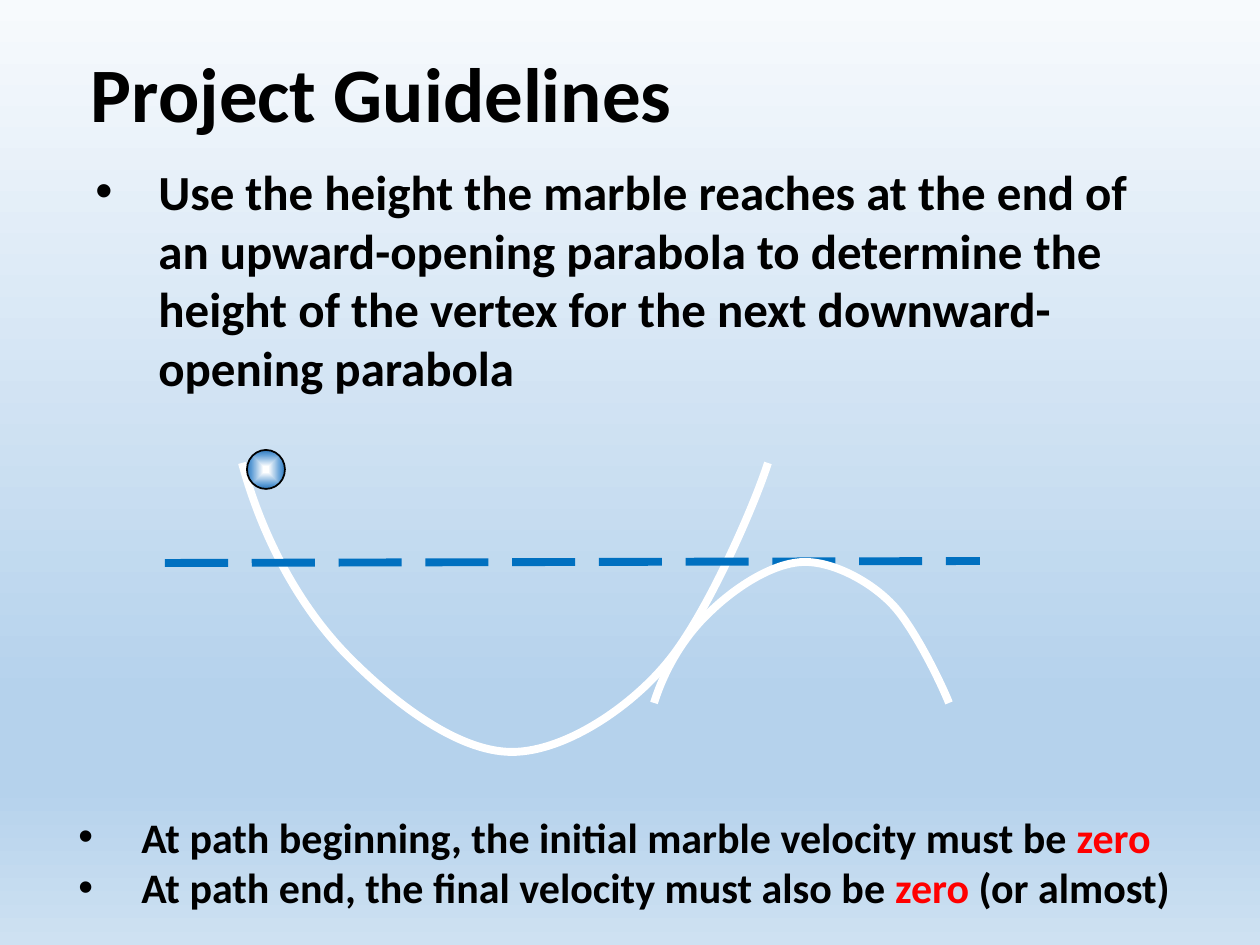
"""Build the Project Guidelines slide with its marble path diagram."""
from lxml.etree import SubElement
from pptx import Presentation
from pptx.dml.color import RGBColor
from pptx.enum.dml import MSO_LINE
from pptx.enum.shapes import MSO_CONNECTOR, MSO_SHAPE
from pptx.enum.text import MSO_ANCHOR, MSO_AUTO_SIZE, PP_ALIGN
from pptx.oxml.ns import qn
from pptx.util import Emu, Pt

PX = 914400 / 126
COLORS = {
    "text": "000000", "accent": "FF0000", "track": "FFFFFF", "level": "0070C0",
    "sky": "F7FAFD", "blue": "B5D2EC", "haze": "CEE1F2",
    "shine": "FFFFFF", "marble": "5B9BD5", "rim": "2E75B6", "edge": "ADCDEA",
}
TITLE = ("Project Guidelines", (78, 39, 961, 102), 44)
BULLETS = [
    ((83, 155, 1062, 255), 28, [
        [("Use the height the marble reaches at the end of an upward-opening "
          "parabola to determine the height of the vertex for the next "
          "downward-opening parabola", "text")],
    ]),
    ((66, 805, 1152, 122), 24, [
        [("At path beginning, the initial marble velocity must be ", "text"),
         ("zero", "accent")],
        [("At path end, the final velocity must also be ", "text"),
         ("zero", "accent"), (" (or almost)", "text")],
    ]),
]
VALLEY = [
    (242, 463), (262, 536), (297, 602), (343, 651), (389, 699), (456, 752),
    (512, 752), (568, 752), (641, 701), (677, 650), (713, 600), (755, 504), (768, 463),
]
HILL = [
    (654, 703), (665, 668), (685, 635), (711, 611), (736, 587), (774, 562),
    (805, 562), (837, 562), (878, 586), (898, 611), (918, 636), (941, 683), (949, 703),
]
LEVEL = (165, 563, 980, 561)
MARBLE = (247, 450, 38, 39)
BACKDROP_STOPS = [(0, "sky"), (74, "blue"), (83, "blue"), (100, "haze")]
MARBLE_STOPS = [(13, "shine"), (77, "marble"), (100, "rim"), (100, "edge")]


def px(*lengths):
    return [Emu(round(length * PX)) for length in lengths]


def color(name):
    return RGBColor.from_string(COLORS[name])


def set_line(shape, name, width, **formats):
    shape.line.color.rgb = color(name)
    for key, value in {"width": Pt(width), **formats}.items():
        setattr(shape.line, key, value)


def set_gradient(owner, fill, stops, radial=False):
    fill.gradient()
    gradient = owner.find(".//" + qn("a:gradFill"))
    for child in list(gradient):
        gradient.remove(child)
    stop_list = SubElement(gradient, qn("a:gsLst"))
    for percent, name in stops:
        stop = SubElement(stop_list, qn("a:gs"), pos=str(percent * 1000))
        SubElement(stop, qn("a:srgbClr"), val=COLORS[name])
    if radial:
        center = SubElement(gradient, qn("a:path"), path="shape")
        SubElement(center, qn("a:fillToRect"), {side: "50000" for side in "ltrb"})
    else:
        SubElement(gradient, qn("a:lin"), ang="5400000", scaled="0")


def set_frame(frame):
    formats = {"word_wrap": True, "auto_size": MSO_AUTO_SIZE.NONE,
               "vertical_anchor": MSO_ANCHOR.TOP}
    for key, value in formats.items():
        setattr(frame, key, value)


def add_run(paragraph, wording, size, name="text"):
    run = paragraph.add_run()
    run.text = wording
    for key, value in {"name": "Calibri", "size": Pt(size), "bold": True}.items():
        setattr(run.font, key, value)
    run.font.color.rgb = color(name)


def add_title(slide, wording, box, size):
    title = slide.shapes.title
    title.left, title.top, title.width, title.height = px(*box)
    set_frame(title.text_frame)
    paragraph = title.text_frame.paragraphs[0]
    paragraph.alignment = PP_ALIGN.LEFT
    add_run(paragraph, wording, size)


def add_bullets(slide, box, size, items):
    frame = slide.shapes.add_textbox(*px(*box)).text_frame
    set_frame(frame)
    for index, runs in enumerate(items):
        paragraph = frame.add_paragraph() if index else frame.paragraphs[0]
        for wording, name in runs:
            add_run(paragraph, wording, size, name)
        properties = paragraph._p.get_or_add_pPr()
        properties.set("marL", "457200")
        properties.set("indent", "-457200")
        SubElement(properties, qn("a:buFont"), typeface="Arial")
        SubElement(properties, qn("a:buChar"), char="•")


def add_curve(slide, points):
    builder = slide.shapes.build_freeform(*points[0], scale=PX)
    builder.add_line_segments(points[1:], close=False)
    curve = builder.convert_to_shape()
    segments = list(curve.element.iter(qn("a:lnTo")))
    for start in range(0, len(segments), 3):
        bezier = SubElement(segments[start].getparent(), qn("a:cubicBezTo"))
        for segment in segments[start:start + 3]:
            bezier.append(segment[0])
            segment.getparent().remove(segment)
    curve.fill.background()
    curve.shadow.inherit = False
    set_line(curve, "track", 4.5)


def add_marble(slide):
    marble = slide.shapes.add_shape(MSO_SHAPE.OVAL, *px(*MARBLE))
    set_gradient(marble.element, marble.fill, MARBLE_STOPS, radial=True)
    marble.shadow.inherit = False
    set_line(marble, "text", 1)


def add_level(slide):
    level = slide.shapes.add_connector(MSO_CONNECTOR.STRAIGHT, *px(*LEVEL))
    set_line(level, "level", 4.5, dash_style=MSO_LINE.LONG_DASH)
    SubElement(level.element.spPr, qn("a:effectLst"))


def main():
    deck = Presentation()
    deck.slide_width, deck.slide_height = px(1260, 945)
    slide = deck.slides.add_slide(deck.slide_layouts[5])
    set_gradient(slide.element, slide.background.fill, BACKDROP_STOPS)
    add_title(slide, *TITLE)
    add_curve(slide, VALLEY)
    add_marble(slide)
    add_level(slide)
    add_curve(slide, HILL)
    for bullets in BULLETS:
        add_bullets(slide, *bullets)
    deck.save("out.pptx")


if __name__ == "__main__":
    main()
